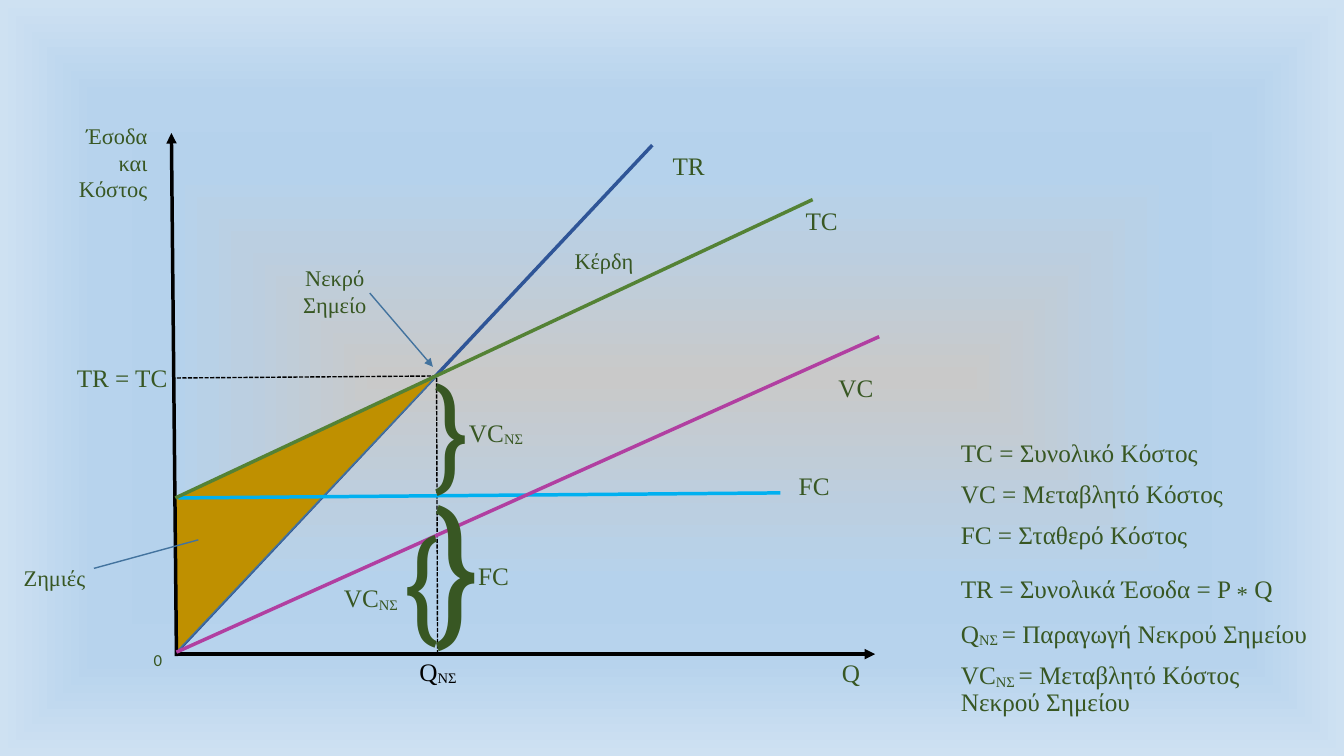
from lxml.etree import SubElement
from pptx import Presentation
from pptx.dml.color import RGBColor
from pptx.enum.dml import MSO_LINE
from pptx.enum.shapes import MSO_CONNECTOR, MSO_SHAPE
from pptx.enum.text import MSO_ANCHOR, MSO_AUTO_SIZE, PP_ALIGN
from pptx.oxml.ns import qn
from pptx.util import Inches, Pt

LEFT, CENTER, RIGHT = PP_ALIGN.LEFT, PP_ALIGN.CENTER, PP_ALIGN.RIGHT
rgb = RGBColor.from_string
GREEN, BLACK, THIN_BLUE = "385723", "000000", "43739E"


def write(tf, paragraphs, size=18, font="Times New Roman", color=GREEN, align=CENTER,
          anchor=MSO_ANCHOR.TOP, spacing=None, before=0):
    """Fill tf; in each paragraph "_" switches to subscript and back, "\\n" breaks the line."""
    tf.word_wrap, tf.auto_size, tf.vertical_anchor = True, MSO_AUTO_SIZE.NONE, anchor
    for i, text in enumerate(paragraphs):
        p = tf.paragraphs[0] if i == 0 else tf.add_paragraph()
        p.alignment, p.line_spacing, p.space_before = align, spacing, Pt(before)
        for j, part in enumerate(text.split("_")):
            for k, line in enumerate(part.split("\n")):
                if k:
                    p.add_line_break()
                r = p.add_run()
                r.text = line
                r.font.name, r.font.color.rgb = font, rgb(color)
                r.font.size = Pt(28 if line == "*" else size)
                if j % 2:
                    r._r.get_or_add_rPr().set("baseline", "-10000")


prs = Presentation()
prs.slide_width, prs.slide_height = Inches(13.33), Inches(7.5)
s = prs.slides.add_slide(prs.slide_layouts[1])
s.shapes.title.element.getparent().remove(s.shapes.title.element)

# Background: gradient spreading from the centre
s.background.fill.gradient()
grad = s._element.xpath(".//p:bgPr/a:gradFill")[0]
for child in list(grad):
    grad.remove(child)
stops = SubElement(grad, qn("a:gsLst"))
for pos, color in [(0, "C9C9C9"), (36, "BBCFE1"), (45, "B8D1E7"), (54, "B5D2EC"),
                   (65, "B5D2EC"), (75, "B7D3ED"), (100, "CEE1F2")]:
    stop = SubElement(stops, qn("a:gs"), pos=str(pos * 1000))
    SubElement(stop, qn("a:srgbClr"), val=color)
shade = SubElement(grad, qn("a:path"), path="shape")
SubElement(shade, qn("a:fillToRect"), {side: "50000" for side in "ltrb"})

# Legend
legend = s.placeholders[1]
legend.left, legend.top, legend.width, legend.height = map(Inches, (9.43, 4.32, 3.78, 2.8))
write(legend.text_frame, [
    "TC = Συνολικό Κόστος",
    "VC = Μεταβλητό Κόστος",
    "FC = Σταθερό Κόστος",
    "TR = Συνολικά Έσοδα = P _*_ Q",
    "Q_ΝΣ _= Παραγωγή Νεκρού Σημείου",
    "VC_ΝΣ _= Μεταβλητό Κόστος\nΝεκρού Σημείου",
], align=LEFT, spacing=0.9, before=10)
for p in legend.text_frame.paragraphs:
    pPr = p._p.get_or_add_pPr()
    pPr.set("marL", "0")
    pPr.set("indent", "0")
    SubElement(pPr, qn("a:buNone"))

# Loss area between cost and revenue, left of the break-even point
ORIGIN, BREAK_EVEN, FIXED = (1.75, 6.47), (4.33, 3.73), (1.74, 4.94)
LOSS_CORNERS = [tuple(map(Inches, point)) for point in (FIXED, BREAK_EVEN, ORIGIN)]

# Chart lines: from, to, colour, width, dashed, arrow
LINES = [
    (ORIGIN, (6.47, 1.44), "2F5597", 2.5, False, False),
    ((4.34, 6.49), BREAK_EVEN, BLACK, 1, True, False),
    (BREAK_EVEN, (1.72, 3.75), BLACK, 1, True, False),
    "loss",
    ((1.77, 4.94), (7.74, 4.89), "00B0F0", 2.5, False, False),
    ((1.74, 6.49), (8.68, 6.49), BLACK, 2.5, False, True),
    ((1.75, 6.51), (1.7, 1.32), BLACK, 2.5, False, True),
    (ORIGIN, (8.72, 3.34), "B13FA1", 2.5, False, False),
    (FIXED, (8.06, 1.98), "548235", 2.5, False, False),
]
for item in LINES:
    if item == "loss":
        outline = s.shapes.build_freeform(*LOSS_CORNERS[0])
        outline.add_line_segments(LOSS_CORNERS[1:], close=True)
        loss = outline.convert_to_shape()
        loss.shadow.inherit = False
        loss.fill.solid()
        loss.fill.fore_color.rgb = rgb("BF9000")
        loss.line.color.rgb, loss.line.width = rgb(THIN_BLUE), Pt(1)
        continue
    start, end, color, width, dashed, arrow = item
    line = s.shapes.add_connector(MSO_CONNECTOR.STRAIGHT, *map(Inches, start + end))
    line.line.color.rgb, line.line.width = rgb(color), Pt(width)
    if dashed:
        line.line.dash_style = MSO_LINE.SQUARE_DOT
    if arrow:
        SubElement(line.line._get_or_add_ln(), qn("a:tailEnd"), type="triangle")
    SubElement(line._element.spPr, qn("a:effectLst"))

# Callouts: text, box, leader (y, x at both ends as shares of the box), arrow
for text, box, leader, arrow in [
    ("Νεκρό Σημείο", (2.69, 2.31, 1.26, 1.15), (0.52, 0.776, 1.156, 1.273), True),
    ("Ζημιές", (-0.26, 5.15, 1.6, 1.15), (0.425, 0.745, 0.179, 1.392), False),
]:
    sp = s.shapes.add_shape(MSO_SHAPE.LINE_CALLOUT_1_NO_BORDER, *map(Inches, box))
    sp.shadow.inherit = False
    sp.fill.background()
    sp.line.color.rgb, sp.line.width = rgb(THIN_BLUE), Pt(1)
    for i, share in enumerate(leader):
        sp.adjustments[i] = share
    if arrow:
        SubElement(sp.line._get_or_add_ln(), qn("a:tailEnd"), type="triangle")
    write(sp.text_frame, [text], size=16, anchor=MSO_ANCHOR.MIDDLE)

# Labels: text, box, format
BRACE = dict(font="Roboto Condensed", align=LEFT)
for text, box, style in [
    ("TR", (6.5, 1.44, 0.66, 0.44), {}),
    ("TC", (7.82, 1.99, 0.66, 0.44), {}),
    ("VC", (8.16, 3.64, 0.66, 0.44), {}),
    ("FC", (7.72, 4.62, 0.71, 0.55), {}),
    ("Q", (8.16, 6.47, 0.56, 0.52), {}),
    ("Q_ΝΣ", (3.89, 6.46, 0.91, 0.52), dict(color=BLACK)),
    ("0", (1.29, 6.4, 0.55, 0.28), dict(size=12, font="Calibri")),
    ("Έσοδα|και|Κόστος", (0.63, 1.16, 0.93, 1.15), dict(size=16, align=RIGHT)),
    ("TR = TC", (0.57, 3.55, 1.19, 0.44), dict(align=RIGHT)),
    ("Κέρδη", (5.6, 2.4, 0.8, 0.37), dict(size=16, align=LEFT)),
    ("}", (4.2, 4.63, 0.46, 1.95), dict(BRACE, size=109)),
    ("FC", (4.54, 5.51, 0.71, 0.55), {}),
    ("}", (4.2, 3.5, 0.46, 1.51), dict(BRACE, size=84)),
    ("VC_ΝΣ", (4.47, 4.09, 0.9, 0.55), {}),
    ("}", (4, 5.23, 0.46, 1.51), dict(BRACE, size=84, turn=180)),
    ("VC_ΝΣ", (3.23, 5.73, 0.9, 0.55), {}),
]:
    label = s.shapes.add_textbox(*map(Inches, box))
    label.rotation = style.pop("turn", 0)
    write(label.text_frame, text.split("|"), **style)

prs.save("out.pptx")
